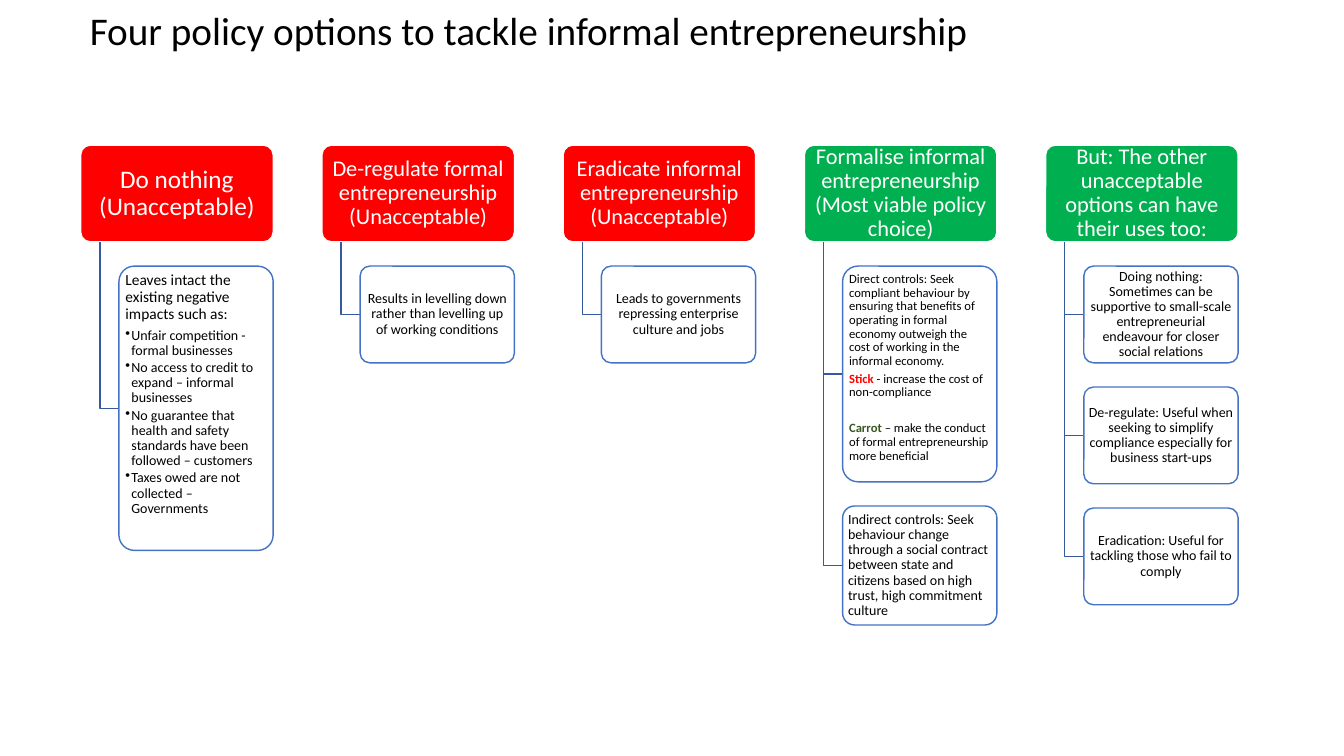
from lxml.etree import SubElement
from pptx import Presentation
from pptx.dml.color import RGBColor
from pptx.enum.shapes import MSO_SHAPE
from pptx.enum.text import MSO_ANCHOR as Anchor, MSO_AUTO_SIZE as AutoSize, PP_ALIGN as Align
from pptx.oxml.ns import qn
from pptx.util import Inches, Pt

FONT = "Calibri"
RED, GREEN, DARK_GREEN = "FF0000", "00B050", "385723"
WHITE, BLACK, BLUE, ELBOW_BLUE = "FFFFFF", "000000", "4472C4", "365B9D"

TITLE = "Four policy options to tackle informal entrepreneurship"


def para_of(*spans, size=10, after=0, bullet=False):
    """Describe a paragraph; each span is plain text or (text, bold colour)."""
    return {"spans": spans, "size": size, "after": after, "bullet": bullet}


IMPACTS = [
    "Unfair competition - formal businesses",
    "No access to credit to expand – informal businesses",
    "No guarantee that health and safety standards have been followed – customers",
    "Taxes owed are not collected – Governments",
]
NEGATIVES = [para_of("Leaves intact the existing negative impacts such as:", size=11, after=4)]
NEGATIVES += [para_of(impact, after=1.5, bullet=True) for impact in IMPACTS]

DIRECT_CONTROLS = [
    para_of("Direct controls: Seek compliant behaviour by ensuring that benefits of operating "
            "in formal economy outweigh the cost of working in the informal economy.",
            size=9, after=3),
    para_of(("Stick", RED), " - increase the cost of non-compliance", size=9, after=16),
    para_of(("Carrot ", DARK_GREEN),
            "– make the conduct of formal entrepreneurship more beneficial", size=9),
]
INDIRECT_CONTROLS = [
    para_of("Indirect controls: Seek behaviour change through a social contract between state "
            "and citizens based on high trust, high commitment culture"),
]

# Each option: heading, heading size, colour, details as (paragraphs, height, align, anchor)
SMALL = (0.96, Align.CENTER, Anchor.MIDDLE)
OPTIONS = [
    ("Do nothing (Unacceptable)", 18, RED,
     [(NEGATIVES, 2.82, Align.LEFT, Anchor.TOP)]),
    ("De-regulate formal entrepreneurship (Unacceptable)", 16, RED,
     [([para_of("Results in levelling down rather than levelling up of working conditions")],
       *SMALL)]),
    ("Eradicate informal entrepreneurship (Unacceptable)", 16, RED,
     [([para_of("Leads to governments repressing enterprise culture and jobs")], *SMALL)]),
    ("Formalise informal entrepreneurship (Most viable policy choice)", 16, GREEN,
     [(DIRECT_CONTROLS, 2.14, Align.LEFT, Anchor.TOP),
      (INDIRECT_CONTROLS, 1.18, Align.LEFT, Anchor.MIDDLE)]),
    ("But: The other unacceptable options can have their uses too:", 16, GREEN,
     [([para_of("Doing nothing: Sometimes can be supportive to small-scale entrepreneurial "
                "endeavour for closer social relations")], *SMALL),
      ([para_of("De-regulate: Useful when seeking to simplify compliance especially for "
                "business start-ups")], *SMALL),
      ([para_of("Eradication: Useful for tackling those who fail to comply")], *SMALL)]),
]

FIRST_LEFT, LAST_LEFT, HEAD_TOP = 0.8, 10.37, 1.44
HEAD_WIDTH, HEAD_HEIGHT = 1.91, 0.96
PITCH = (LAST_LEFT - FIRST_LEFT) / (len(OPTIONS) - 1)
STEM = 0.19
DETAIL_INDENT, DETAIL_WIDTH, GAP = 2 * STEM, 1.53, 0.24


def colour(value):
    return RGBColor.from_string(value)


def write(frame, paragraphs, align, text_colour):
    for index, content in enumerate(paragraphs):
        para = frame.paragraphs[0] if index == 0 else frame.add_paragraph()
        para.alignment = align
        para.line_spacing = 0.9
        para.space_before = Pt(0)
        para.space_after = Pt(content["after"])
        if content["bullet"]:
            properties = para._p.get_or_add_pPr()
            properties.set("marL", str(Inches(0.06)))
            properties.set("indent", str(-Inches(0.06)))
            SubElement(properties, qn("a:buChar")).set("char", "•")
        for span in content["spans"]:
            bold = isinstance(span, tuple)
            text, span_colour = span if bold else (span, text_colour)
            run = para.add_run()
            run.text = text
            run.font.name = FONT
            run.font.size = Pt(content["size"])
            run.font.bold = bold
            run.font.color.rgb = colour(span_colour)


def add_box(page, left, top, width, height, fill, line, inset):
    box = page.shapes.add_shape(MSO_SHAPE.ROUNDED_RECTANGLE, Inches(left), Inches(top),
                                Inches(width), Inches(height))
    box.adjustments[0] = 0.1
    box.shadow.inherit = False
    box.fill.solid()
    box.fill.fore_color.rgb = colour(fill)
    box.line.color.rgb = colour(line)
    box.line.width = Pt(1)
    frame = box.text_frame
    frame.word_wrap = True
    frame.vertical_anchor = Anchor.MIDDLE
    frame.margin_left = frame.margin_right = Inches(inset)
    frame.margin_top = frame.margin_bottom = Inches(0.02)
    return box


def add_elbow(page, left, top, bottom):
    builder = page.shapes.build_freeform(Inches(left), Inches(top))
    builder.add_line_segments([(Inches(left), Inches(bottom)),
                               (Inches(left + STEM), Inches(bottom))], close=False)
    elbow = builder.convert_to_shape()
    elbow.shadow.inherit = False
    elbow.fill.background()
    elbow.line.color.rgb = colour(ELBOW_BLUE)
    elbow.line.width = Pt(1)


def add_option(page, left, heading, size, fill, details):
    head = add_box(page, left, HEAD_TOP, HEAD_WIDTH, HEAD_HEIGHT, fill, WHITE, 0.03)
    write(head.text_frame, [para_of(heading, size=size)], Align.CENTER, WHITE)
    head_bottom = HEAD_TOP + HEAD_HEIGHT
    top = head_bottom + GAP
    for paragraphs, height, align, anchor in details:
        add_elbow(page, left + STEM, head_bottom, top + height / 2)
        box = add_box(page, left + DETAIL_INDENT, top, DETAIL_WIDTH, height, WHITE, BLUE, 0.02)
        box.text_frame.vertical_anchor = anchor
        write(box.text_frame, paragraphs, align, BLACK)
        top += height + GAP


def main():
    deck = Presentation()
    deck.slide_width, deck.slide_height = Inches(13.33), Inches(7.5)
    page = deck.slides.add_slide(deck.slide_layouts[5])
    title = page.shapes.title
    title.left, title.top = Inches(0.79), Inches(0.2)
    title.width, title.height = Inches(11.5), Inches(0.26)
    title.text_frame.auto_size = AutoSize.NONE
    title.text_frame.vertical_anchor = Anchor.MIDDLE
    write(title.text_frame, [para_of(TITLE, size=28)], Align.LEFT, BLACK)
    for column, option in enumerate(OPTIONS):
        add_option(page, FIRST_LEFT + column * PITCH, *option)
    deck.save("out.pptx")


if __name__ == "__main__":
    main()
